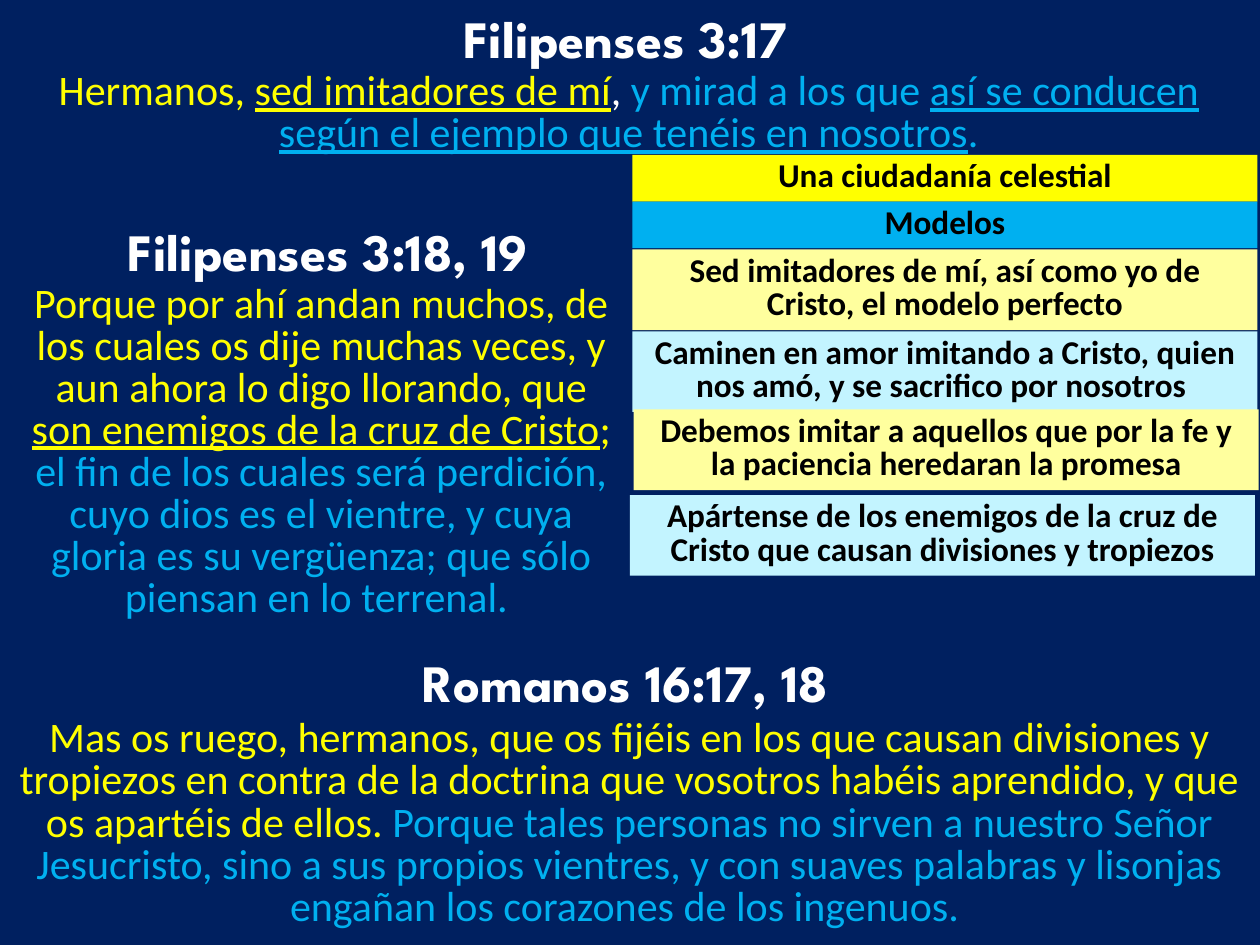
"""Build a slide of Bible passages beside a column of teaching points."""
import pptx
import pptx.dml.color
import pptx.enum.shapes
import pptx.enum.text
import pptx.util

Inches = pptx.util.Inches

THEME = {
    "background": "002060", "white": "FFFFFF", "black": "000000",
    "yellow": "FFFF00", "blue": "00B0F0",
    "pale_yellow": "FFFF9E", "pale_blue": "C3F4FF",
    "heading_font": "League Spartan", "body_font": "Calibri",
    "heading_size": 30, "verse_size": 24, "point_size": 19,
}

PASSAGES = [
    {
        "heading": "Filipenses 3:17", "heading_box": (2.64, 0, 4.65, 0.61),
        "verse_box": (0, 0.52, 9.98, 0.78),
        "verse": [
            ("Hermanos, ", "yellow", False),
            ("sed imitadores de mí", "yellow", True),
            (", ", "white", False),
            ("y mirad a los que ", "blue", False),
            ("así se conducen según el ejemplo que tenéis en nosotros", "blue", True),
            (".", "blue", False),
        ],
    },
    {
        "heading": "Filipenses 3:18, 19", "heading_box": (0.28, 1.69, 4.65, 0.61),
        "verse_box": (0.1, 2.21, 4.9, 2.8),
        "verse": [
            ("Porque por ahí andan muchos, de los cuales os dije muchas veces, "
             "y aun ahora lo digo llorando, que ", "yellow", False),
            ("son enemigos de la cruz de Cristo", "yellow", True),
            ("; ", "yellow", False),
            ("el fin de los cuales será perdición, cuyo dios es el vientre, y cuya gloria "
             "es su vergüenza; que sólo piensan en lo terrenal. ", "blue", False),
        ],
    },
    {
        "heading": "Romanos 16:17, 18", "heading_box": (2.64, 5.11, 4.65, 0.61),
        "verse_box": (0, 5.66, 9.99, 1.79),
        "verse": [
            ("Mas os ruego, hermanos, que os fijéis en los que causan divisiones y tropiezos "
             "en contra de la doctrina que vosotros habéis aprendido, y que os apartéis de "
             "ellos. ", "yellow", False),
            ("Porque tales personas no sirven a nuestro Señor Jesucristo, sino a sus propios "
             "vientres, y con suaves palabras y lisonjas engañan los corazones de los "
             "ingenuos. ", "blue", False),
        ],
    },
]

POINT_WIDTH, LINE_HEIGHT, POINT_PADDING = 4.96, 0.27, 0.1
POINTS = [
    ("Una ciudadanía celestial", "yellow", 5.02, 1.23, 1),
    ("Modelos", "blue", 5.02, 1.6, 1),
    ("Sed imitadores de mí, así como yo de Cristo, el modelo perfecto",
     "pale_yellow", 5.02, 1.98, 2),
    ("Caminen en amor imitando a Cristo, quien nos amó, y se sacrifico por nosotros ",
     "pale_blue", 5.02, 2.63, 2),
    ("Debemos imitar a aquellos que por la fe y la paciencia heredaran la promesa",
     "pale_yellow", 5.03, 3.25, 2),
    ("Apártense de los enemigos de la cruz de Cristo que causan divisiones y tropiezos",
     "pale_blue", 5, 3.93, 2),
]


def color(name):
    return pptx.dml.color.RGBColor.from_string(THEME[name])


def set_values(target, values):
    for name, value in values.items():
        setattr(target, name, value)


def write(shape, runs, font, size, bold=False, fixed_spacing=True):
    set_values(shape.text_frame, {
        "word_wrap": True,
        "auto_size": pptx.enum.text.MSO_AUTO_SIZE.SHAPE_TO_FIT_TEXT,
        "vertical_anchor": pptx.enum.text.MSO_ANCHOR.TOP,
    })
    points = pptx.util.Pt(THEME[size])
    paragraph = shape.text_frame.paragraphs[0]
    set_values(paragraph, {
        "alignment": pptx.enum.text.PP_ALIGN.CENTER,
        "line_spacing": points if fixed_spacing else 1.0,
    })
    for text, color_name, underline in runs:
        run = paragraph.add_run()
        run.text = text
        set_values(run.font, {
            "name": THEME[font], "size": points, "bold": bold, "underline": underline,
        })
        run.font.color.rgb = color(color_name)


def add_passage(slide, passage, heading):
    box = [Inches(value) for value in passage["heading_box"]]
    if heading is None:
        heading = slide.shapes.add_textbox(*box)
    set_values(heading, dict(zip(("left", "top", "width", "height"), box)))
    write(heading, [(passage["heading"], "white", False)],
          "heading_font", "heading_size", bold=True, fixed_spacing=False)
    verse = slide.shapes.add_textbox(*(Inches(value) for value in passage["verse_box"]))
    write(verse, passage["verse"], "body_font", "verse_size")


def add_point(slide, text, fill, left, top, lines):
    height = lines * LINE_HEIGHT + POINT_PADDING
    shape = slide.shapes.add_shape(
        pptx.enum.shapes.MSO_SHAPE.RECTANGLE,
        Inches(left), Inches(top), Inches(POINT_WIDTH), Inches(height))
    shape.shadow.inherit = False
    shape.fill.solid()
    shape.fill.fore_color.rgb = color(fill)
    shape.line.fill.background()
    write(shape, [(text, "black", False)], "body_font", "point_size", bold=True)


def main():
    presentation = pptx.Presentation()
    set_values(presentation, {"slide_width": Inches(10), "slide_height": Inches(7.5)})
    slide = presentation.slides.add_slide(presentation.slide_layouts.get_by_name("Title Only"))
    slide.background.fill.solid()
    slide.background.fill.fore_color.rgb = color("background")
    for index, passage in enumerate(PASSAGES):
        add_passage(slide, passage, slide.shapes.title if index == 0 else None)
    for point in POINTS:
        add_point(slide, *point)
    presentation.save("out.pptx")


if __name__ == "__main__":
    main()
